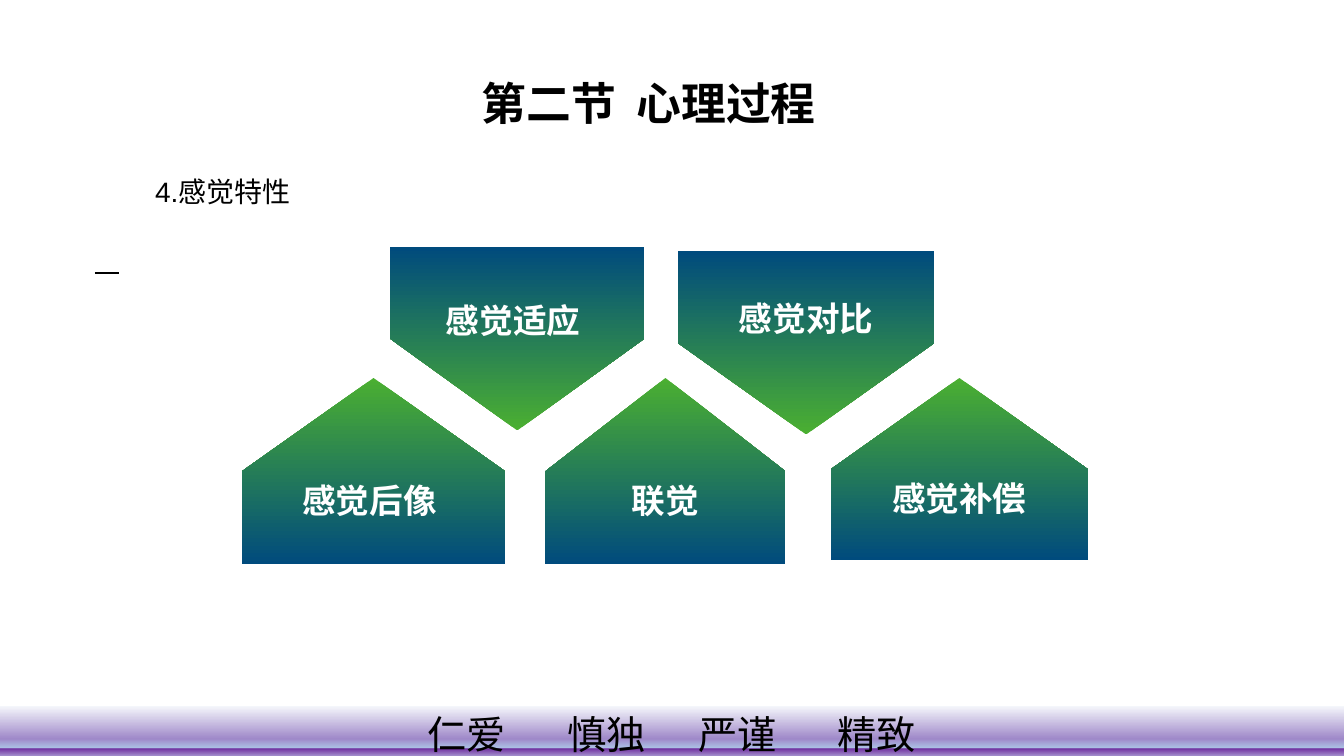
import dataclasses

import pptx
import pptx.dml.color
import pptx.enum.shapes
import pptx.enum.text
import pptx.oxml
import pptx.oxml.ns
import pptx.util

Inches = pptx.util.Inches
ALIGN = pptx.enum.text.PP_ALIGN
ANCHOR = pptx.enum.text.MSO_ANCHOR
SHAPE = pptx.enum.shapes.MSO_SHAPE
qn = pptx.oxml.ns.qn


@dataclasses.dataclass(frozen=True)
class Theme:
    cjk: str = "Noto Sans CJK SC"
    latin: str = "Arial"
    ink: str = "000000"
    label: str = "FFFFFF"
    title_size: int = 32
    motto_size: int = 28
    label_size: int = 24
    topic_size: int = 20
    arrow: tuple = ((0, "4BAF31"), (100, "004B7D"))
    band: tuple = ((0, "F6F8FC"), (58, "9F89C9"), (74, "ABC0E4"), (75, "7030A0"),
                   (93, "B7B5DE"), (96, "C3CBE8"), (98, "C9D6ED"), (99, "CDDFF1"),
                   (100, "C7D5ED"))


THEME = Theme()


def add_element(parent, tag, **attributes):
    child = pptx.oxml.parse_xml(f"<{tag} {pptx.oxml.ns.nsdecls('a')}/>")
    for name, value in attributes.items():
        child.set(name, str(value))
    parent.append(child)
    return child


def write(frame, text, size, font=THEME.cjk, color=THEME.ink, bold=False,
          align=ALIGN.CENTER, anchor=ANCHOR.MIDDLE, tabs=()):
    """Fill a text frame with one formatted paragraph; tabs are in inches."""
    frame.word_wrap = True
    frame.vertical_anchor = anchor
    paragraph = frame.paragraphs[0]
    paragraph.alignment = align
    if tabs:
        tab_list = add_element(paragraph._p.get_or_add_pPr(), "a:tabLst")
        for stop in tabs:
            add_element(tab_list, "a:tab", pos=Inches(stop), algn="l")
    run = paragraph.add_run()
    run.text = text
    run.font.size = pptx.util.Pt(size)
    run.font.bold = bold
    run.font.name = font
    run.font.color.rgb = pptx.dml.color.RGBColor.from_string(color)
    add_element(run._r.get_or_add_rPr(), "a:ea", typeface=THEME.cjk)


def add_text(slide, box, text, size, **style):
    frame = slide.shapes.add_textbox(*map(Inches, box)).text_frame
    write(frame, text, size, **style)


def add_gradient_shape(slide, kind, box, stops, angle):
    """Angle is clockwise, in degrees."""
    shape = slide.shapes.add_shape(kind, *map(Inches, box))
    shape.shadow.inherit = False
    shape.line.fill.background()
    shape.fill.gradient()
    gradient = shape._element.spPr.find(qn("a:gradFill"))
    gradient.set("rotWithShape", "1")
    stop_list = gradient.find(qn("a:gsLst"))
    for old_stop in list(stop_list):
        stop_list.remove(old_stop)
    for percent, color in stops:
        stop = add_element(stop_list, "a:gs", pos=percent * 1000)
        add_element(stop, "a:srgbClr", val=color)
    gradient.find(qn("a:lin")).set("ang", str(angle * 60000))
    return shape


def add_pentagon(slide, box, text, points_up, label_top, label_shift=0):
    """Box is the visible outline; the preset is turned a quarter inside it."""
    left, top, width, height = box
    turned = (left + (width - height) / 2, top + (height - width) / 2, height, width)
    pentagon = add_gradient_shape(slide, SHAPE.PENTAGON, turned, THEME.arrow, 180)
    pentagon.rotation = 270 if points_up else 90
    add_text(slide, (left + label_shift, top + label_top, width, 0.7), text,
             THEME.label_size, color=THEME.label, bold=True, anchor=ANCHOR.TOP)


def add_features(slide, left, top):
    upper, lower = top, top + 1.3
    add_pentagon(slide, (left + 5.84, lower, 2.55, 1.81), "感觉补偿", True, 0.94)
    add_pentagon(slide, (left + 4.32, upper + 0.04, 2.55, 1.82), "感觉对比", False, 0.42)
    add_pentagon(slide, (left, lower, 2.61, 1.85), "感觉后像", True, 0.96, -0.04)
    add_pentagon(slide, (left + 3.01, lower, 2.38, 1.85), "联觉", True, 0.96)
    add_pentagon(slide, (left + 1.47, upper, 2.52, 1.82), "感觉适应", False, 0.48, -0.04)


def add_topic(slide, left, top):
    add_text(slide, (left + 0.5, top, 6, 0.6), "4.感觉特性", THEME.topic_size,
             font=THEME.latin, align=ALIGN.LEFT)
    dash_y = Inches(top + 1.11)
    dash = slide.shapes.add_connector(
        pptx.enum.shapes.MSO_CONNECTOR.STRAIGHT,
        Inches(left), dash_y, Inches(left + 0.24), dash_y)
    dash.line.width = pptx.util.Pt(1.5)
    dash.line.color.rgb = pptx.dml.color.RGBColor.from_string(THEME.ink)
    add_element(dash._element.spPr, "a:effectLst")


def add_motto_band(slide, box):
    band = add_gradient_shape(slide, SHAPE.RECTANGLE, box, THEME.band, 90)
    frame = band.text_frame
    frame.margin_left = Inches(4.24)
    frame.margin_top = frame.margin_bottom = 0
    write(frame, "仁爱\t慎独\t严谨\t精致", THEME.motto_size,
          align=ALIGN.LEFT, tabs=(1.39, 2.69, 4.07))


def main():
    deck = pptx.Presentation()
    deck.slide_width, deck.slide_height = Inches(13.33), Inches(7.5)
    slide = deck.slides.add_slide(deck.slide_layouts[6])
    add_motto_band(slide, (0, 7, 13.33, 0.57))
    add_text(slide, (4.3, 0.43, 4.27, 1.18), "第二节  心理过程",
             THEME.title_size, bold=True)
    add_topic(slide, 0.94, 1.6)
    add_features(slide, 2.4, 2.45)
    deck.save("out.pptx")


if __name__ == "__main__":
    main()
